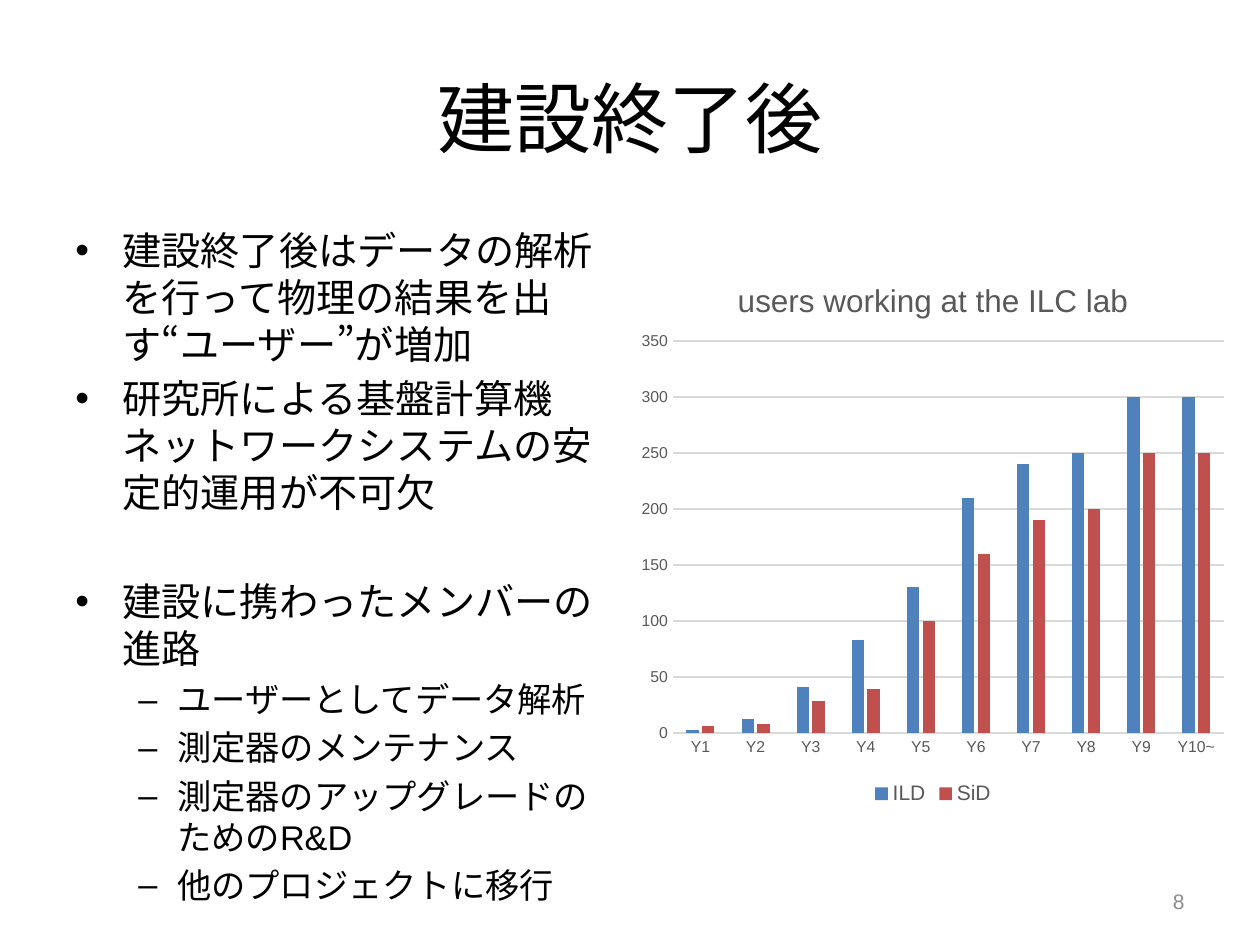
import dataclasses

import lxml.etree
import pptx
import pptx.chart.data
import pptx.dml.color
import pptx.enum.chart
import pptx.enum.lang
import pptx.enum.text
import pptx.oxml.ns
import pptx.util

PX_PER_INCH = 126
FONT = "Arial"
BLACK = pptx.dml.color.RGBColor(0x00, 0x00, 0x00)
NUMBER_GRAY = pptx.dml.color.RGBColor(0x8C, 0x8C, 0x8C)
LABEL_GRAY = pptx.dml.color.RGBColor(0x59, 0x59, 0x59)
GRID_GRAY = pptx.dml.color.RGBColor(0xD9, 0xD9, 0xD9)
ILD_BLUE = pptx.dml.color.RGBColor(0x4F, 0x81, 0xBD)
SID_RED = pptx.dml.color.RGBColor(0xC0, 0x50, 0x4D)
ALIGN = pptx.enum.text.PP_ALIGN
ANCHOR = pptx.enum.text.MSO_ANCHOR


@dataclasses.dataclass(frozen=True)
class Box:
    left: int
    top: int
    width: int
    height: int

    def emu(self) -> list[pptx.util.Emu]:
        return [px(n) for n in (self.left, self.top, self.width, self.height)]


@dataclasses.dataclass(frozen=True)
class Level:
    bullet: str
    size: float
    margin: int
    hanging: int


@dataclasses.dataclass(frozen=True)
class Point:
    text: str
    level: Level
    space_before: float = 4


@dataclasses.dataclass(frozen=True)
class Detector:
    name: str
    users: tuple[int, ...]
    color: pptx.dml.color.RGBColor


MAIN = Level("•", 22.4, 47, 47)
SUB = Level("–", 19.6, 102, 39)

POINTS = (
    Point("建設終了後はデータの解析を行って物理の結果を出す“ユーザー”が増加", MAIN),
    Point("研究所による基盤計算機ネットワークシステムの安定的運用が不可欠", MAIN),
    Point("建設に携わったメンバーの進路", MAIN, 35.5),
    Point("ユーザーとしてデータ解析", SUB),
    Point("測定器のメンテナンス", SUB),
    Point("測定器のアップグレードのためのR&D", SUB),
    Point("他のプロジェクトに移行", SUB),
)
YEARS = [f"Y{year}" for year in range(1, 10)] + ["Y10~"]
DETECTORS = (
    Detector("ILD", (3, 12, 41, 83, 130, 210, 240, 250, 300, 300), ILD_BLUE),
    Detector("SiD", (6, 8, 28, 39, 100, 160, 190, 200, 250, 250), SID_RED),
)
CHART = Box(630, 256, 606, 554)
PLOT = Box(673, 341, 551, 392)


def px(length: int) -> pptx.util.Emu:
    return pptx.util.Emu(round(length * 914400 / PX_PER_INCH))


def style(font, size: float, color: pptx.dml.color.RGBColor) -> None:
    font.name = FONT
    font.size = pptx.util.Pt(size)
    font.bold = False
    font.color.rgb = color


def add_frame(slide, box: Box, anchor):
    frame = slide.shapes.add_textbox(*box.emu()).text_frame
    frame.word_wrap = True
    frame.vertical_anchor = anchor
    return frame


def write(paragraph, text: str, size: float, color: pptx.dml.color.RGBColor) -> None:
    paragraph.text = text
    for run in paragraph.runs:
        style(run.font, size, color)
        run.font.language_id = pptx.enum.lang.MSO_LANGUAGE_ID.JAPANESE


def add_line(slide, box: Box, text: str, size: float, color, align) -> None:
    paragraph = add_frame(slide, box, ANCHOR.MIDDLE).paragraphs[0]
    write(paragraph, text, size, color)
    paragraph.alignment = align


def add_points(slide, box: Box, points: tuple[Point, ...]) -> None:
    frame = add_frame(slide, box, ANCHOR.TOP)
    for index, point in enumerate(points):
        paragraph = frame.add_paragraph() if index else frame.paragraphs[0]
        level = point.level
        write(paragraph, point.text, level.size, BLACK)
        paragraph.level = 1 if level is SUB else 0
        paragraph.space_before = pptx.util.Pt(point.space_before)
        properties = paragraph._p.get_or_add_pPr()
        properties.set("marL", str(px(level.margin)))
        properties.set("indent", str(-px(level.hanging)))
        for tag, name, value in (("a:buFont", "typeface", FONT), ("a:buChar", "char", level.bullet)):
            mark = lxml.etree.SubElement(properties, pptx.oxml.ns.qn(tag))
            mark.set(name, value)


def draw_line(line, color: pptx.dml.color.RGBColor) -> None:
    line.color.rgb = color
    line.width = pptx.util.Pt(0.75)


def place_plot(chart, box: Box, plot: Box) -> None:
    area = chart._chartSpace.chart.plotArea
    for old in area.findall(pptx.oxml.ns.qn("c:layout")):
        area.remove(old)
    layout = lxml.etree.Element(pptx.oxml.ns.qn("c:layout"))
    area.insert(0, layout)
    manual = lxml.etree.SubElement(layout, pptx.oxml.ns.qn("c:manualLayout"))
    settings = {
        "layoutTarget": "inner",
        "xMode": "edge",
        "yMode": "edge",
        "x": (plot.left - box.left) / box.width,
        "y": (plot.top - box.top) / box.height,
        "w": plot.width / box.width,
        "h": plot.height / box.height,
    }
    for name, value in settings.items():
        lxml.etree.SubElement(manual, pptx.oxml.ns.qn(f"c:{name}")).set("val", str(value))


def add_users_chart(slide, box: Box, plot: Box, detectors: tuple[Detector, ...]) -> None:
    users = pptx.chart.data.CategoryChartData()
    users.categories = YEARS
    for detector in detectors:
        users.add_series(detector.name, detector.users)
    chart = slide.shapes.add_chart(
        pptx.enum.chart.XL_CHART_TYPE.COLUMN_CLUSTERED, *box.emu(), users
    ).chart
    style(chart.font, 10, BLACK)

    chart.has_title = True
    heading = chart.chart_title.text_frame
    heading.text = "users working at the ILC lab"
    style(heading.paragraphs[0].font, 18, LABEL_GRAY)
    style(heading.paragraphs[0].runs[0].font, 18, LABEL_GRAY)

    chart.has_legend = True
    chart.legend.position = pptx.enum.chart.XL_LEGEND_POSITION.BOTTOM
    chart.legend.include_in_layout = False
    style(chart.legend.font, 12, LABEL_GRAY)

    for axis in (chart.category_axis, chart.value_axis):
        axis.major_tick_mark = pptx.enum.chart.XL_TICK_MARK.NONE
        axis.minor_tick_mark = pptx.enum.chart.XL_TICK_MARK.NONE
        style(axis.tick_labels.font, 9, LABEL_GRAY)
    draw_line(chart.category_axis.format.line, GRID_GRAY)
    chart.value_axis.format.line.fill.background()
    chart.value_axis.minimum_scale = 0
    chart.value_axis.maximum_scale = 350
    chart.value_axis.major_unit = 50
    draw_line(chart.value_axis.major_gridlines.format.line, GRID_GRAY)

    columns = chart.plots[0]
    columns.gap_width = 219
    columns.overlap = -27
    columns.vary_by_categories = False
    for series, detector in zip(columns.series, detectors):
        series.format.fill.solid()
        series.format.fill.fore_color.rgb = detector.color
    place_plot(chart, box, plot)


def main() -> None:
    deck = pptx.Presentation()
    deck.slide_width = px(1260)
    deck.slide_height = px(945)
    slide = deck.slides.add_slide(deck.slide_layouts[6])
    add_line(slide, Box(63, 38, 1134, 158), "建設終了後", 44, BLACK, ALIGN.CENTER)
    add_points(slide, Box(63, 220, 557, 624), POINTS)
    add_line(slide, Box(903, 876, 294, 50), "8", 12, NUMBER_GRAY, ALIGN.RIGHT)
    add_users_chart(slide, CHART, PLOT, DETECTORS)
    deck.save("out.pptx")


if __name__ == "__main__":
    main()
